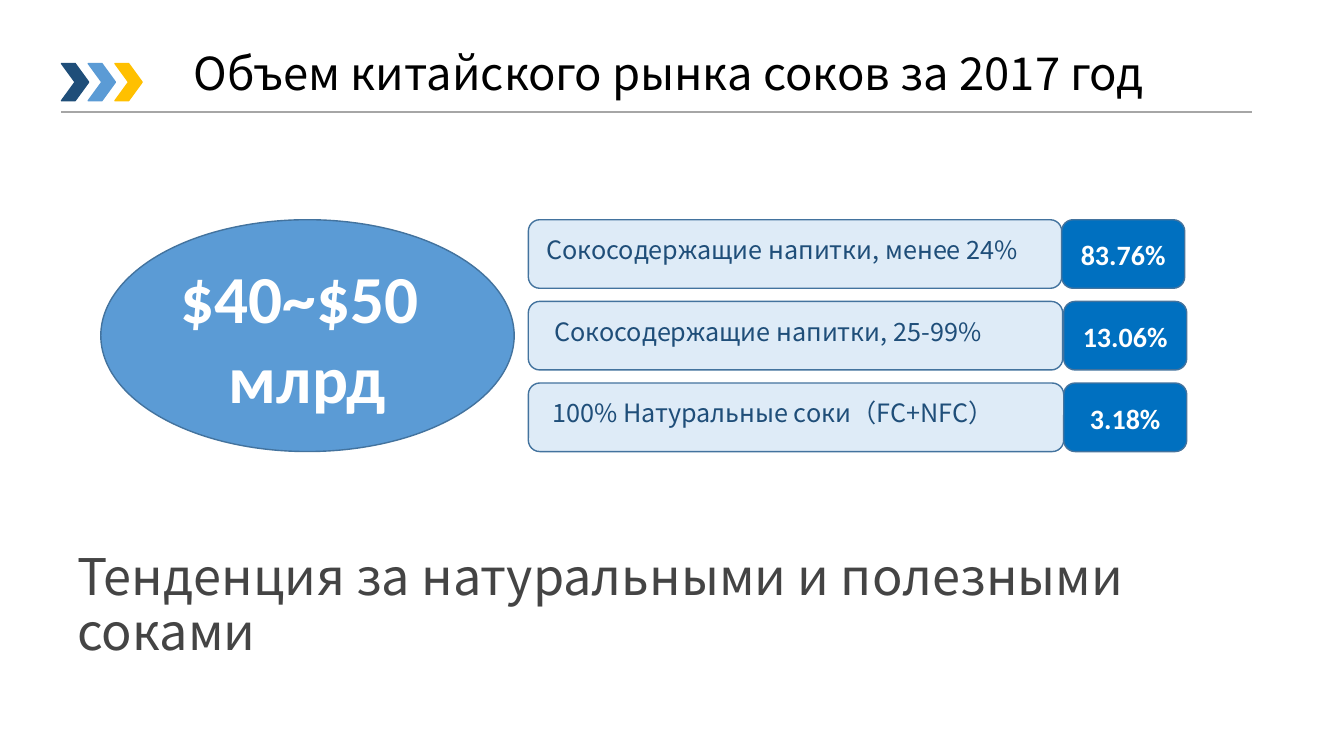
from lxml.etree import SubElement
from pptx import Presentation
from pptx.dml.color import RGBColor
from pptx.enum.shapes import MSO_CONNECTOR, MSO_SHAPE as SHAPE
from pptx.enum.text import MSO_ANCHOR, PP_ALIGN as ALIGN
from pptx.oxml.ns import qn
from pptx.util import Inches, Pt

NAVY = RGBColor(0x1F, 0x4E, 0x79)
BLUE = RGBColor(0x5B, 0x9B, 0xD5)
GOLD = RGBColor(0xFF, 0xC0, 0x00)
PALE = RGBColor(0xDE, 0xEB, 0xF7)
STRONG = RGBColor(0x00, 0x70, 0xC0)
EDGE = RGBColor(0x43, 0x73, 0x9E)
GREY = RGBColor(0xA6, 0xA6, 0xA6)
DARK = RGBColor(0x44, 0x44, 0x44)
WHITE = RGBColor(0xFF, 0xFF, 0xFF)
BLACK = RGBColor(0, 0, 0)
SANS = "Noto Sans CJK SC"

TITLE = "Объем китайского рынка соков за 2017 год"
MARKET = ["$40~$50 ", "млрд"]
TREND = "Тенденция за натуральными и полезными соками"
# label, share, label left, bar width, share left
SEGMENTS = [
    ("Сокосодержащие напитки, менее 24%", "83.76%", 5.32, 5.29, 10.53),
    ("Сокосодержащие напитки, 25-99%", "13.06%", 5.4, 5.3, 10.55),
    ("100% Натуральные соки（FC+NFC）", "3.18%", 5.38, 5.31, 10.55),
]
CHEVRONS = [NAVY, BLUE, GOLD]

TITLE_FONT = {"name": SANS, "size": Pt(32.4), "color": BLACK}
LABEL_FONT = {"name": SANS, "size": Pt(18), "color": NAVY}
SHARE_FONT = {"name": "Calibri", "size": Pt(20), "bold": True, "color": WHITE}
MARKET_FONT = {**SHARE_FONT, "size": Pt(48)}
TREND_FONT = {"name": SANS, "size": Pt(36), "color": DARK}

ROW_TOP, ROW_STEP, ROW_HEIGHT, TEXT_DROP = 2.18, 0.81, 0.68, 0.13
BAR_LEFT, SHARE_WIDTH = 5.24, 1.22


def write(tf, lines, font, align=ALIGN.LEFT, spacing=None):
    tf.word_wrap = True
    for i, line in enumerate(lines):
        p = tf.paragraphs[0] if i == 0 else tf.add_paragraph()
        p.alignment = align
        if spacing:
            p.line_spacing = spacing
        r = p.add_run()
        r.text = line
        for key, value in font.items():
            if key == "color":
                r.font.color.rgb = value
            else:
                setattr(r.font, key, value)
        if font["name"] == SANS:
            SubElement(r.font._element, qn("a:ea")).set("typeface", SANS)


def add_text(s, box, lines, font, align=ALIGN.LEFT, spacing=None):
    sp = s.shapes.add_textbox(*map(Inches, box))
    write(sp.text_frame, lines, font, align, spacing)


def add_block(s, kind, box, fill, line):
    sp = s.shapes.add_shape(kind, *map(Inches, box))
    sp.shadow.inherit = False
    sp.fill.solid()
    sp.fill.fore_color.rgb = fill
    sp.line.color.rgb = line
    sp.line.width = Pt(1)


def add_header(s):
    title = s.shapes.title
    title.left, title.top, title.width, title.height = map(
        Inches, (1.82, 0.4, 10.59, 0.71))
    title.text_frame.vertical_anchor = MSO_ANCHOR.MIDDLE
    write(title.text_frame, [TITLE], TITLE_FONT, spacing=0.9)
    for i, color in enumerate(CHEVRONS):
        add_block(s, SHAPE.CHEVRON, (0.61 + i * 0.265, 0.63, 0.27, 0.37),
                  color, color)
    rule = s.shapes.add_connector(
        MSO_CONNECTOR.STRAIGHT, *map(Inches, (0.61, 1.11, 12.42, 1.11)))
    rule.line.color.rgb = GREY
    rule.line.width = Pt(1.5)
    SubElement(rule._element.spPr, qn("a:effectLst"))


def add_segments(s):
    for i, (label, share, label_left, width, share_left) in enumerate(SEGMENTS):
        top = ROW_TOP + i * ROW_STEP
        text_top = top + TEXT_DROP
        add_block(s, SHAPE.ROUNDED_RECTANGLE,
                  (BAR_LEFT, top, width, ROW_HEIGHT), PALE, EDGE)
        add_text(s, (label_left, text_top, BAR_LEFT + width - label_left, 0.4),
                 [label], LABEL_FONT, spacing=0.9)
        add_block(s, SHAPE.ROUNDED_RECTANGLE,
                  (share_left, top, SHARE_WIDTH, ROW_HEIGHT), STRONG, EDGE)
        add_text(s, (share_left, text_top, SHARE_WIDTH, 0.44),
                 [share], SHARE_FONT, ALIGN.CENTER)


def main():
    prs = Presentation()
    prs.slide_width, prs.slide_height = Inches(13.33), Inches(7.5)
    s = prs.slides.add_slide(prs.slide_layouts[5])
    add_header(s)
    add_segments(s)
    add_block(s, SHAPE.OVAL, (1, 2.18, 4.1, 2.3), BLUE, EDGE)
    add_text(s, (0.93, 2.49, 4.24, 1.72), MARKET, MARKET_FONT, ALIGN.CENTER)
    add_text(s, (0.67, 5.43, 12.16, 1.31), [TREND], TREND_FONT, spacing=0.9)
    prs.save("out.pptx")


if __name__ == "__main__":
    main()
